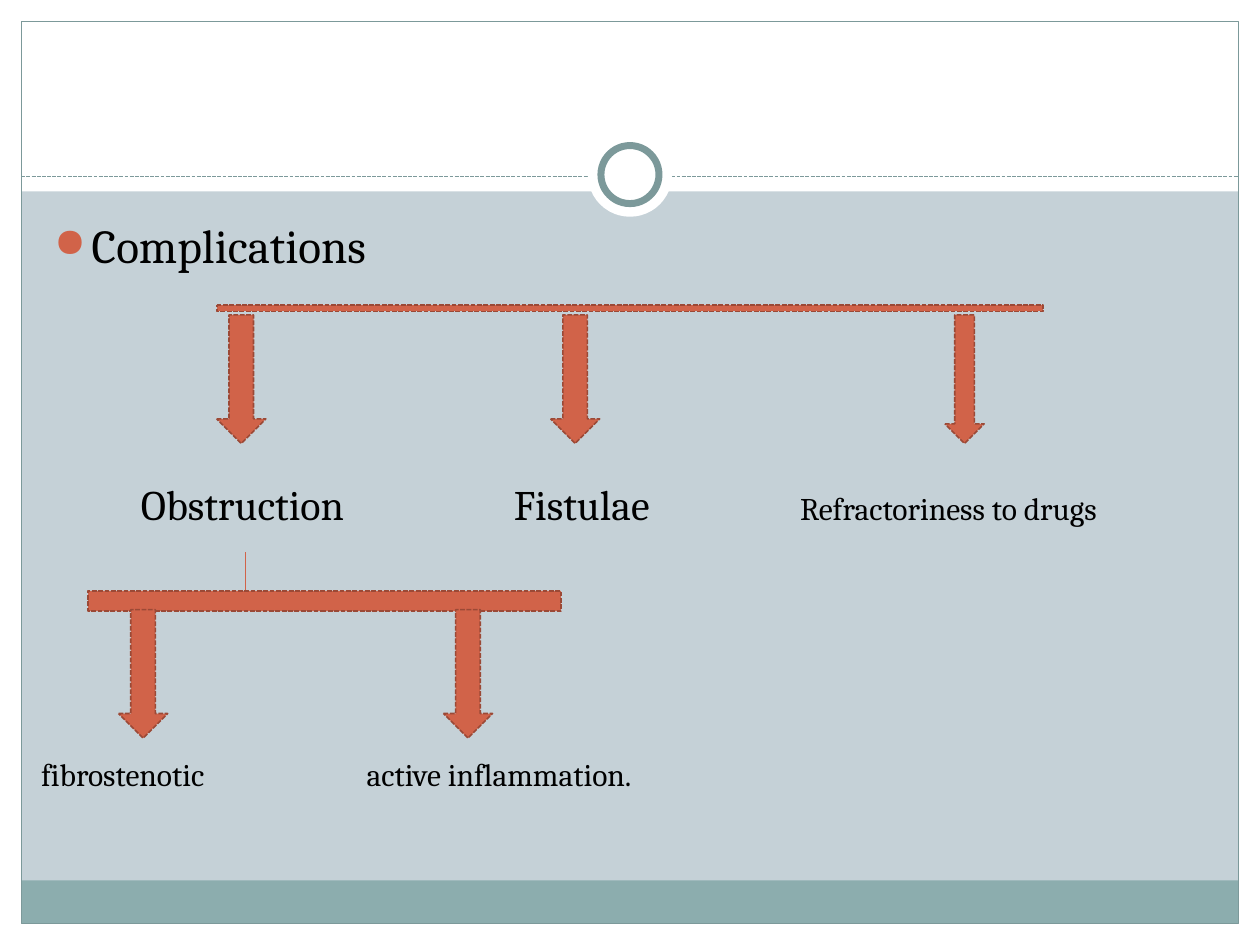
from lxml.etree import SubElement
from pptx import Presentation
from pptx.dml.color import RGBColor
from pptx.enum.dml import MSO_LINE
from pptx.enum.shapes import MSO_CONNECTOR, MSO_SHAPE as SHAPE
from pptx.enum.text import MSO_AUTO_SIZE, MSO_ANCHOR, PP_ALIGN
from pptx.oxml.ns import qn
from pptx.util import Cm, Pt

WHITE = RGBColor(0xFF, 0xFF, 0xFF)
BLACK = RGBColor(0, 0, 0)
PALE = RGBColor(0xC5, 0xD1, 0xD7)
TEAL = RGBColor(0x8C, 0xAD, 0xAE)
GREY = RGBColor(0x7C, 0x99, 0x9A)
RUST = RGBColor(0xD1, 0x63, 0x49)
BROWN = RGBColor(0x9B, 0x49, 0x36)

W, H, EDGE = 25.4, 19.05, 0.43
HEADER_H, RULE_Y = 3.86, 3.56
RING_Y = 3.52
ARROW_H = 2.59

TITLE = "Complications"
STEM = (4.95, 11.13, 4.95, 12.12)
LEVELS = [
    {
        "bar": (SHAPE.FLOWCHART_PROCESS, 4.37, 6.15, 16.66, 0.13),
        "arrow_y": 6.35,
        "arrows": [(4.37, 0.99), (11.1, 0.99), (19.05, 0.79)],
        "labels": [
            ("Obstruction", 24, 2.59, 9.53, 5.03, 1.27),
            ("Fistulae", 24, 10.11, 9.53, 3.53, 1.27),
            ("Refractoriness to drugs", 18, 15.88, 9.73, 7.11, 1.02),
        ],
    },
    {
        "bar": (SHAPE.RECTANGLE, 1.78, 11.91, 9.53, 0.41),
        "arrow_y": 12.29,
        "arrows": [(2.39, 0.99), (8.94, 0.99)],
        "labels": [
            ("fibrostenotic", 18, 0.58, 15.09, 4.11, 1.02),
            ("active inflammation.", 18, 7.14, 15.09, 6.38, 1.02),
        ],
    },
]


def style_line(line, color, width, dashed=False):
    line.color.rgb = color
    line.width = Pt(width)
    if dashed:
        line.dash_style = MSO_LINE.SQUARE_DOT
        line._ln.find(qn("a:prstDash")).set("val", "sysDash")


def add_shape(s, kind, x, y, w, h, fill=None, line=None, width=0.75, dashed=False):
    sp = s.shapes.add_shape(kind, Cm(x), Cm(y), Cm(w), Cm(h))
    sp.shadow.inherit = False
    if fill is None:
        sp.fill.background()
    else:
        sp.fill.solid()
        sp.fill.fore_color.rgb = fill
    if line is None:
        sp.line.fill.background()
    else:
        style_line(sp.line, line, width, dashed)
    return sp


def add_line(s, x1, y1, x2, y2, color, dashed=False):
    c = s.shapes.add_connector(MSO_CONNECTOR.STRAIGHT, Cm(x1), Cm(y1), Cm(x2), Cm(y2))
    style_line(c.line, color, 0.75, dashed)
    SubElement(c._element.spPr, qn("a:effectLst"))


def add_text(s, text, size, x, y, w, h, wrap=False):
    tf = s.shapes.add_textbox(Cm(x), Cm(y), Cm(w), Cm(h)).text_frame
    tf.word_wrap = wrap
    tf.auto_size = MSO_AUTO_SIZE.NONE if wrap else MSO_AUTO_SIZE.SHAPE_TO_FIT_TEXT
    tf.vertical_anchor = MSO_ANCHOR.TOP
    tf.text = text
    p = tf.paragraphs[0]
    p.alignment = PP_ALIGN.LEFT
    font = p.runs[0].font
    font.name, font.size, font.color.rgb = "Cambria", Pt(size), BLACK
    return p


def add_bullet(p, indent):
    p.space_before = Pt(5.4)
    pPr = p._p.get_or_add_pPr()
    pPr.set("marL", str(Cm(indent)))
    pPr.set("indent", str(-Cm(indent)))
    color = SubElement(pPr, qn("a:buClr"))
    SubElement(color, qn("a:srgbClr")).set("val", str(RUST))
    SubElement(pPr, qn("a:buSzPct")).set("val", "85000")
    SubElement(pPr, qn("a:buChar")).set("char", "●")


def add_frame(s):
    for box in [
        (0, H - EDGE, W, EDGE),
        (0, 0, W, HEADER_H),
        (0, 0, EDGE, H),
        (W - EDGE, 0, EDGE, H),
    ]:
        add_shape(s, SHAPE.RECTANGLE, *box, fill=WHITE)
    inner = W - 2 * EDGE
    add_shape(s, SHAPE.RECTANGLE, EDGE, 17.75, inner, 0.86, fill=TEAL)
    add_shape(s, SHAPE.RECTANGLE, EDGE, EDGE, inner, H - 2 * EDGE, line=GREY)
    add_line(s, EDGE, RULE_Y, W - EDGE, RULE_Y, GREY, dashed=True)
    for d, line in [(1.7, None), (1.17, GREY)]:
        add_shape(s, SHAPE.OVAL, (W - d) / 2, RING_Y - d / 2, d, d, WHITE, line, 4)


def add_level(s, level):
    accent = {"fill": RUST, "line": BROWN, "width": 0.9, "dashed": True}
    add_shape(s, *level["bar"], **accent)
    for x, w in level["arrows"]:
        add_shape(s, SHAPE.DOWN_ARROW, x, level["arrow_y"], w, ARROW_H, **accent)
    for label in level["labels"]:
        add_text(s, *label)


def main():
    prs = Presentation()
    prs.slide_width, prs.slide_height = Cm(W), Cm(H)
    s = prs.slides.add_slide(prs.slide_layouts[6])
    s.background.fill.solid()
    s.background.fill.fore_color.rgb = PALE
    add_frame(s)
    add_bullet(add_text(s, TITLE, 27, 0.84, 4.24, 23.62, 12.7, wrap=True), 0.76)
    main_level, sub_level = LEVELS
    add_level(s, main_level)
    add_line(s, *STEM, RUST)
    add_level(s, sub_level)
    prs.save("out.pptx")


if __name__ == "__main__":
    main()
